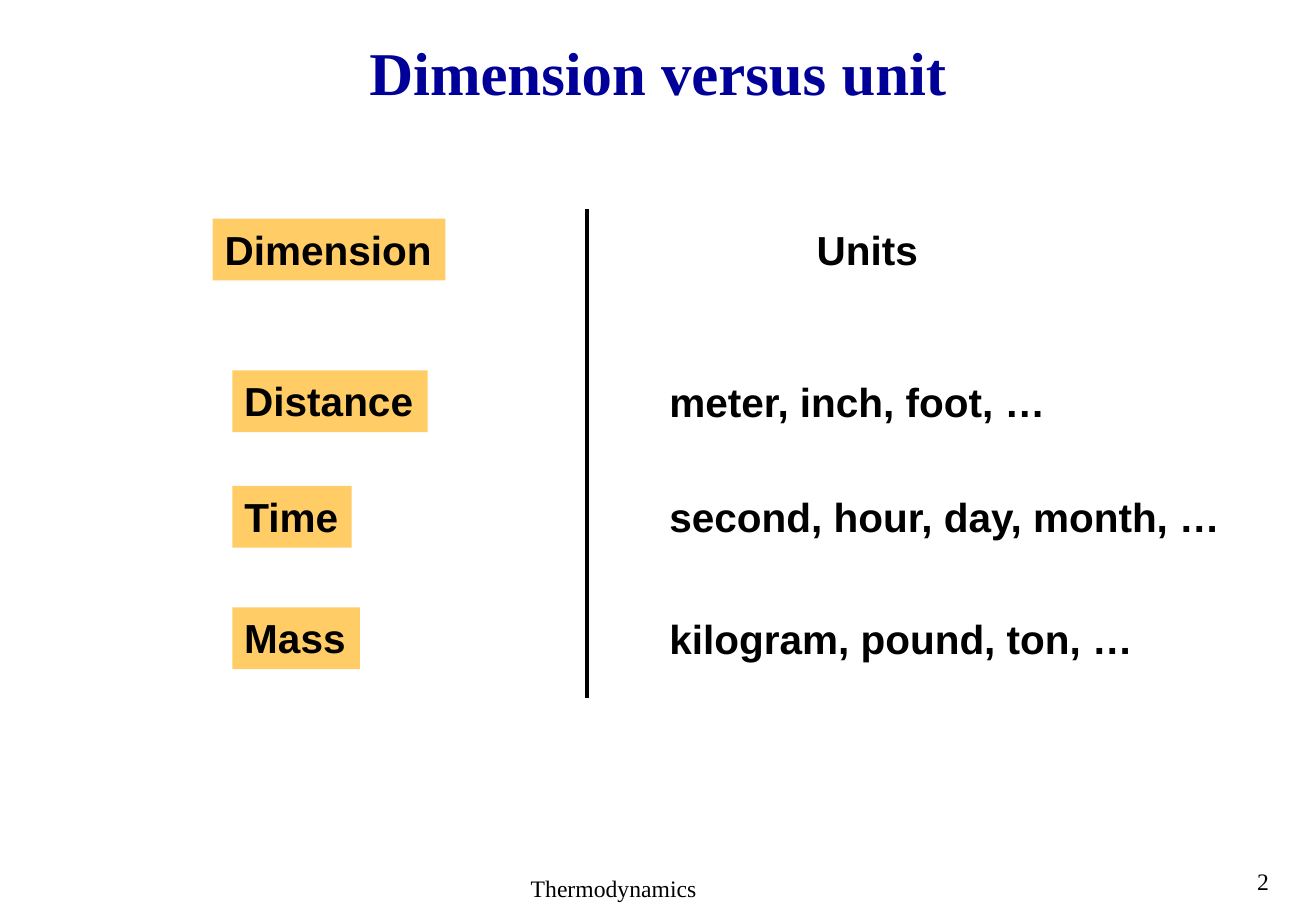
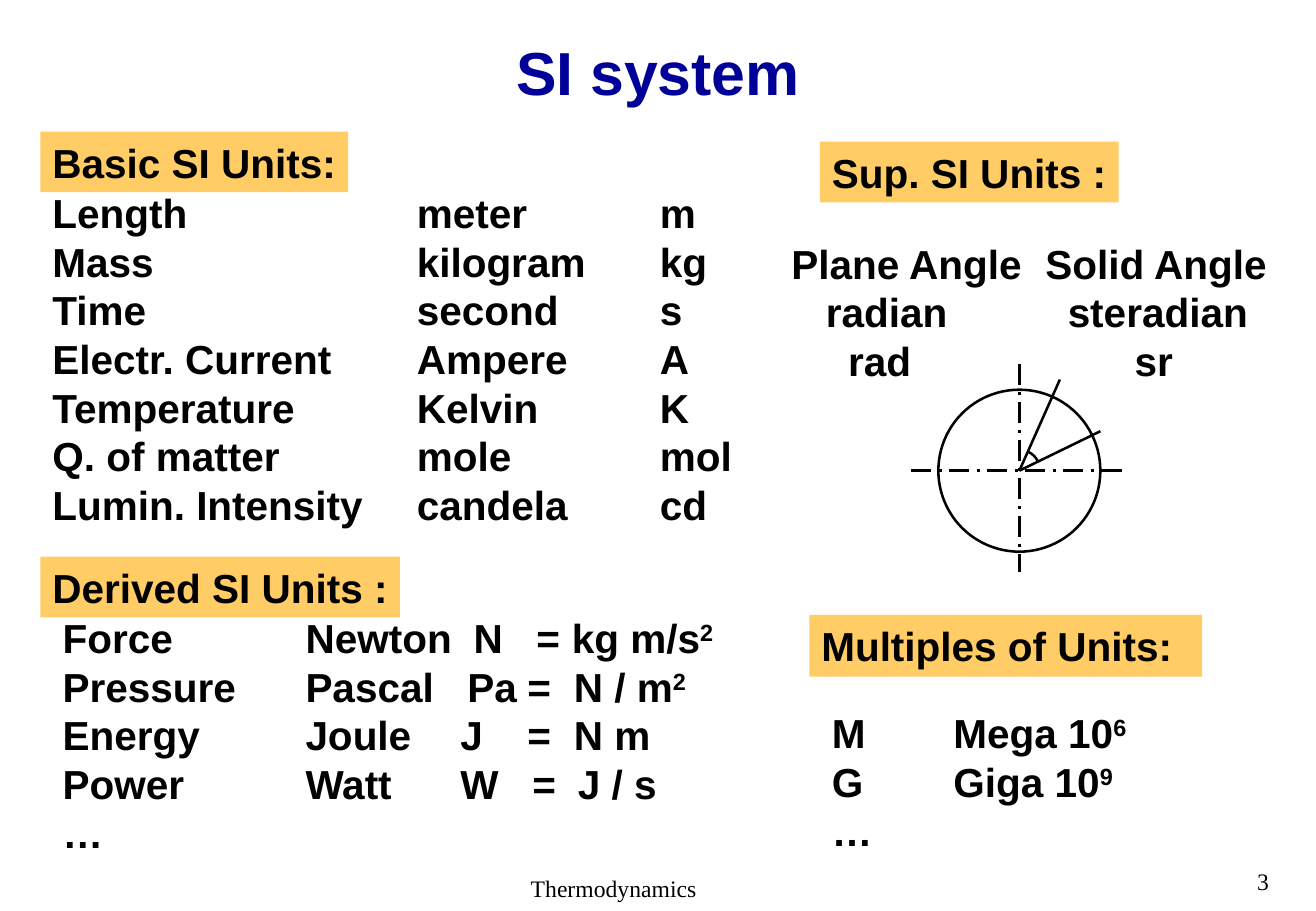
from dataclasses import dataclass
from math import cos, radians, sin

from lxml import etree
from pptx import Presentation
from pptx.dml.color import RGBColor
from pptx.enum.dml import MSO_LINE
from pptx.enum.shapes import MSO_CONNECTOR, MSO_SHAPE
from pptx.enum.text import MSO_ANCHOR, PP_ALIGN
from pptx.oxml.ns import qn
from pptx.util import Emu, Inches, Pt

RECT, OVAL = MSO_SHAPE.RECTANGLE, MSO_SHAPE.OVAL
STRAIGHT = MSO_CONNECTOR.STRAIGHT
DASH_DOT = MSO_LINE.LONG_DASH_DOT
TOP, MIDDLE = MSO_ANCHOR.TOP, MSO_ANCHOR.MIDDLE
LEFT, CENTER = PP_ALIGN.LEFT, PP_ALIGN.CENTER

COLS, ROWS = 130, 90
WIDTH, HEIGHT = Inches(10.83), Inches(7.5)
BLACK, NAVY, AMBER = "000000", "000099", "FFCC66"
SANS, SERIF = "Arial", "Times New Roman"
BODY_SIZE, TITLE_SIZE, FOOTER_SIZE = 24, 36, 14
LEADING = 1.2
LABEL_HEIGHT = 6.1


@dataclass(frozen=True)
class Box:
    col: float
    row: float
    cols: float
    rows: float = LABEL_HEIGHT


@dataclass(frozen=True)
class Line:
    text: str
    tabs: tuple[float, ...] = ()


@dataclass(frozen=True)
class Quantity:
    name: str
    row: float
    cols: float
    units: str
    unit_cols: float


QUANTITIES = (
    Quantity("Distance", 36.6, 19.3, "meter, inch, foot, …", 39.8),
    Quantity("Time", 48, 11.8, "second, hour, day, month, …", 57.2),
    Quantity("Mass", 60, 12.6, "kilogram, pound, ton, …", 48.6),
)
BASIC_UNITS = (
    "Length\tmeter\tm",
    "Mass\tkilogram\tkg",
    "Time\tsecond\ts",
    "Electr. Current\tAmpere\tA",
    "Temperature\tKelvin\tK",
    "Q. of matter\tmole\tmol",
    "Lumin. Intensity\tcandela\tcd",
)
DERIVED_UNITS = [
    Line("Force\tNewton\tN\t=\tkg m/s^2", (24, 40.6, 46.8, 50.3)),
    Line("Pressure\tPascal\tPa\t=\tN / m^2", (24, 40, 45.9, 50.5)),
    Line("Energy\tJoule\tJ\t=\tN m", (24, 39.3, 45.9, 50.5)),
    Line("Power\tWatt\tW\t=\tJ / s", (24, 39.3, 46.4, 50.9)),
    Line("…"),
]
MULTIPLES = ("M\tMega 10^6", "G\tGiga 10^9", "…")
ANGLES = [
    Line("Plane Angle\tSolid Angle", (25.1,)),
    Line("\tradian\tsteradian", (3.4, 27.3)),
    Line("\trad\tsr", (5.6, 33.9)),
]


def color(value: str) -> RGBColor:
    return RGBColor.from_string(value)


def x(cols: float) -> Emu:
    return Emu(round(WIDTH * cols / COLS))


def y(rows: float) -> Emu:
    return Emu(round(HEIGHT * rows / ROWS))


def place(box: Box) -> tuple[Emu, Emu, Emu, Emu]:
    return x(box.col), y(box.row), x(box.cols), y(box.rows)


def table_lines(rows: tuple[str, ...], *tabs: float) -> list[Line]:
    return [Line(row, tabs) for row in rows]


def set_tabs(p, tabs: tuple[float, ...]) -> None:
    if tabs:
        tab_list = etree.SubElement(p._p.get_or_add_pPr(), qn("a:tabLst"))
        for stop in tabs:
            etree.SubElement(tab_list, qn("a:tab"), pos=str(x(stop)), algn="l")


def write(sp, lines: list[Line], size: int = BODY_SIZE, font: str = SANS,
          ink: str = BLACK, bold: bool = True) -> None:
    tf = sp.text_frame
    tf.word_wrap = True
    tf.margin_right = 0
    tf.vertical_anchor = TOP
    for i, line in enumerate(lines):
        p = tf.add_paragraph() if i else tf.paragraphs[0]
        base, _, power = line.text.partition("^")
        p.text = base
        if power:
            r = p.add_run()
            r.text = power
            r._r.get_or_add_rPr().set("baseline", "30000")
        set_tabs(p, line.tabs)
        p.alignment = LEFT
        p.line_spacing = Pt(size * LEADING)
        for r in p.runs:
            r.font.size, r.font.name, r.font.bold = Pt(size), font, bold
            r.font.color.rgb = color(ink)


def add_text(s, box: Box, lines: list[Line], **style):
    sp = s.shapes.add_textbox(*place(box))
    write(sp, lines, **style)
    return sp


def add_label(s, box: Box, text: str) -> None:
    sp = s.shapes.add_shape(RECT, *place(box))
    sp.shadow.inherit = False
    sp.fill.solid()
    sp.fill.fore_color.rgb = color(AMBER)
    sp.line.fill.background()
    write(sp, [Line(text)])


def style_outline(sp) -> None:
    sp.shadow.inherit = False
    sp.fill.background()
    sp.line.color.rgb = color(BLACK)
    sp.line.width = Pt(1.5)


def add_line(s, start: tuple[float, float], end: tuple[float, float],
             width: float = 1.5, dash=None) -> None:
    cn = s.shapes.add_connector(STRAIGHT, x(start[0]), y(start[1]), x(end[0]), y(end[1]))
    cn.line.color.rgb = color(BLACK)
    cn.line.width = Pt(width)
    if dash is not None:
        cn.line.dash_style = dash
    etree.SubElement(cn._element.spPr, qn("a:effectLst"))


def add_base_slide(prs, number: int, title: str, title_cols: float, font: str):
    s = prs.slides.add_slide(prs.slide_layouts[6])
    footer = dict(size=FOOTER_SIZE, font=SERIF, bold=False)
    add_text(s, Box(51.25, 85.7, 19, 4), [Line("Thermodynamics")], **footer)
    add_text(s, Box(123, 85, 5.2, 4), [Line(str(number))], **footer)
    box = Box((COLS - title_cols) / 2, 3.6, title_cols, 7.7)
    sp = add_text(s, box, [Line(title)], size=TITLE_SIZE, font=font, ink=NAVY)
    tf = sp.text_frame
    tf.vertical_anchor = MIDDLE
    tf.margin_left = 0
    p = tf.paragraphs[0]
    p.alignment = CENTER
    p.line_spacing = 0.9
    return s


def add_angle_diagram(s) -> None:
    cx, cy, radius, arc_radius = 100.7, 46.5, 8, 2.05
    style_outline(s.shapes.add_shape(
        OVAL, *place(Box(cx - radius, cy - radius, 2 * radius, 2 * radius))))
    add_line(s, (cx, 36), (cx, 56.5), dash=DASH_DOT)
    add_line(s, (90, cy), (111, cy), dash=DASH_DOT)
    for end in ((108.7, 42.6), (104.7, 37.5)):
        add_line(s, (cx, cy), end)
    arc = [(x(cx + arc_radius * cos(radians(a))), y(cy - arc_radius * sin(radians(a))))
           for a in range(66, 23, -6)]
    builder = s.shapes.build_freeform(*arc[0])
    builder.add_line_segments(arc[1:], close=False)
    style_outline(builder.convert_to_shape())


def build_dimension_slide(prs) -> None:
    s = add_base_slide(prs, 2, "Dimension versus unit", 60, SERIF)
    add_label(s, Box(21, 21.6, 23), "Dimension")
    add_text(s, Box(79.5, 21.6, 12.5), [Line("Units")])
    for q in QUANTITIES:
        add_label(s, Box(22.95, q.row, q.cols), q.name)
        add_text(s, Box(64.95, q.row + 0.05, q.unit_cols), [Line(q.units)])
    add_line(s, (58, 20.6), (58, 69), width=2.25)


def build_si_slide(prs) -> None:
    s = add_base_slide(prs, 3, "SI system", 30.7, SANS)
    add_label(s, Box(4, 13, 30.4, 6), "Basic SI Units:")
    add_text(s, Box(4, 18, 70.2, 35.2), table_lines(BASIC_UNITS, 36, 60))
    add_label(s, Box(4, 55, 35.5, 6), "Derived SI Units :")
    add_text(s, Box(5, 60, 66.8, 25.2), DERIVED_UNITS)
    add_label(s, Box(81, 14, 29.5, 6), "Sup. SI Units :")
    add_text(s, Box(77, 23, 49.5, 15.6), ANGLES)
    add_angle_diagram(s)
    add_label(s, Box(79.95, 60.75, 38.8), "Multiples of Units:")
    add_text(s, Box(81, 69.4, 32.8, 15.7), table_lines(MULTIPLES, 12))


def main() -> None:
    prs = Presentation()
    prs.slide_width, prs.slide_height = WIDTH, HEIGHT
    build_dimension_slide(prs)
    build_si_slide(prs)
    prs.save("out.pptx")


if __name__ == "__main__":
    main()
